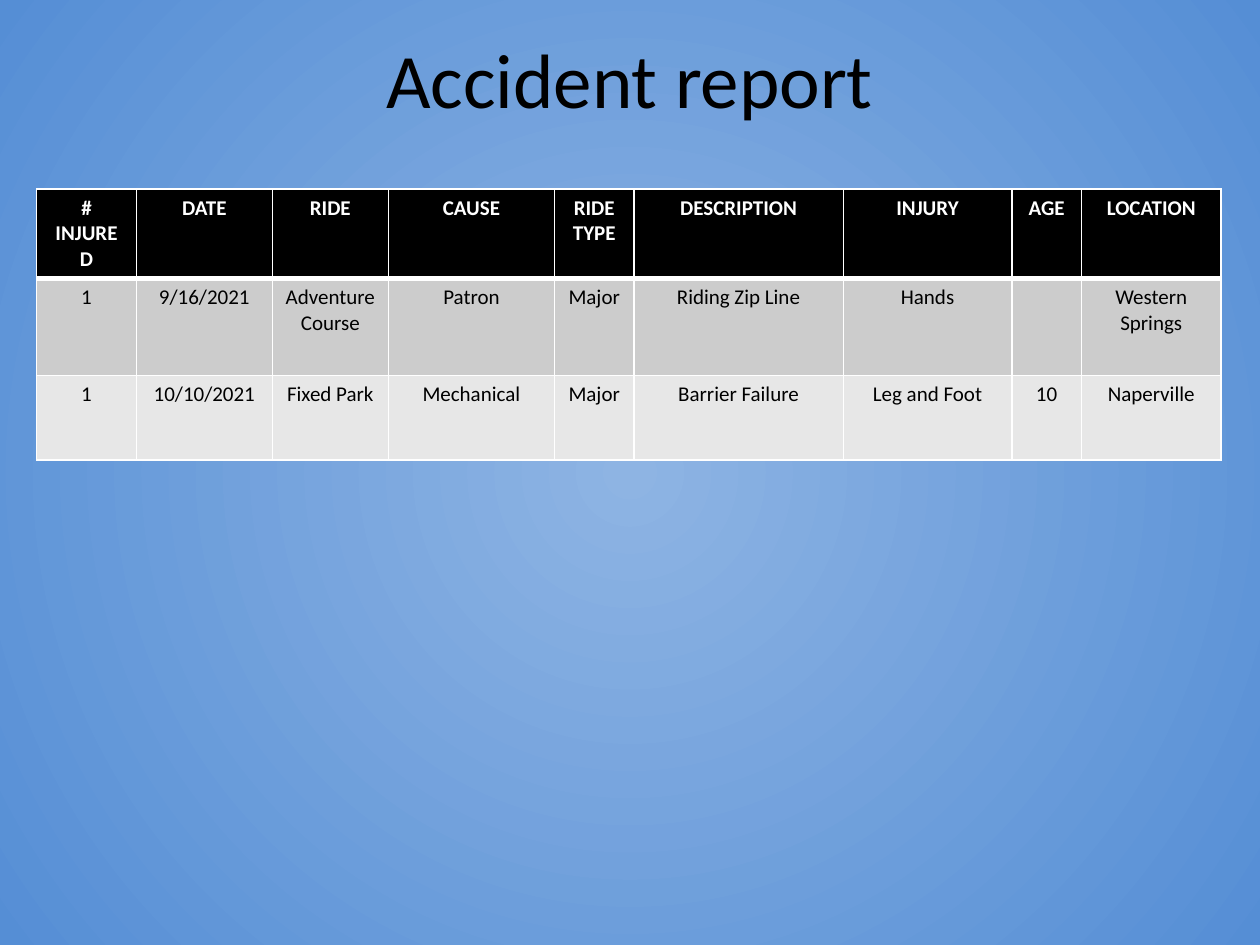
import pptx
import pptx.util
import pptx.dml.color
import pptx.enum.text
import pptx.oxml
import pptx.oxml.ns

Cm, Pt = pptx.util.Cm, pptx.util.Pt
CENTER = pptx.enum.text.PP_ALIGN.CENTER
MIDDLE = pptx.enum.text.MSO_ANCHOR.MIDDLE
NS = pptx.oxml.ns.nsdecls("a")


def color(code):
    return pptx.dml.color.RGBColor.from_string(code)


def write(frame, text, size, code, bold=False):
    para = frame.paragraphs[0]
    para.alignment = CENTER
    run = para.add_run()
    run.text = text
    run.font.name = "Calibri"
    run.font.size = Pt(size)
    run.font.bold = bold
    run.font.color.rgb = color(code)


deck = pptx.Presentation()
deck.slide_width, deck.slide_height = Cm(25.4), Cm(19.05)
slide = deck.slides.add_slide(deck.slide_layouts[5])

fill = slide.background.fill
fill.gradient()
for stop, place, code in zip(fill.gradient_stops, (0, 1), ("8EB4E3", "558ED5")):
    stop.position = place
    stop.color.rgb = color(code)
grad = slide.background._cSld.find(".//" + pptx.oxml.ns.qn("a:gradFill"))
line = grad.find(pptx.oxml.ns.qn("a:lin"))
grad.replace(line, pptx.oxml.parse_xml(
    f'<a:path {NS} path="circle">'
    '<a:fillToRect l="50000" t="50000" r="50000" b="50000"/></a:path>'))

title = slide.shapes.title
title.left, title.top, title.width, title.height = Cm(1.27), Cm(0.2), Cm(22.86), Cm(2.74)
title.text_frame.vertical_anchor = MIDDLE
write(title.text_frame, "Accident report", 44, "000000")

rows = [
    ["# INJURED", "DATE", "RIDE", "CAUSE", "RIDE TYPE", "DESCRIPTION", "INJURY", "AGE", "LOCATION"],
    ["1", "9/16/2021", "Adventure Course", "Patron", "Major", "Riding Zip Line", "Hands", "", "Western Springs"],
    ["1", "10/10/2021", "Fixed Park", "Mechanical", "Major", "Barrier Failure", "Leg and Foot", "10", "Naperville"],
]
widths = [2.01, 2.74, 2.34, 3.35, 1.6, 4.22, 3.4, 1.4, 2.82]
heights = [1.47, 1.96, 1.7]
shades = ["000000", "CCCCCC", "E7E7E7"]

table = slide.shapes.add_table(
    len(rows), len(widths), Cm(0.74), Cm(3.81), Cm(sum(widths)), Cm(sum(heights))).table
for col, width in zip(table.columns, widths):
    col.width = Cm(width)

for r, row in enumerate(rows):
    table.rows[r].height = Cm(heights[r])
    head = r == 0
    for c, text in enumerate(row):
        cell = table.cell(r, c)
        props = cell._tc.get_or_add_tcPr()
        for side in "LRTB":
            thick = (r, side) in ((0, "B"), (1, "T"))
            props.append(pptx.oxml.parse_xml(
                f'<a:ln{side} {NS} w="{Pt(3 if thick else 1)}"><a:solidFill>'
                f'<a:srgbClr val="FFFFFF"/></a:solidFill></a:ln{side}>'))
        cell.fill.solid()
        cell.fill.fore_color.rgb = color(shades[r])
        if text:
            write(cell.text_frame, text, 12, "FFFFFF" if head else "000000", head)

deck.save("out.pptx")
